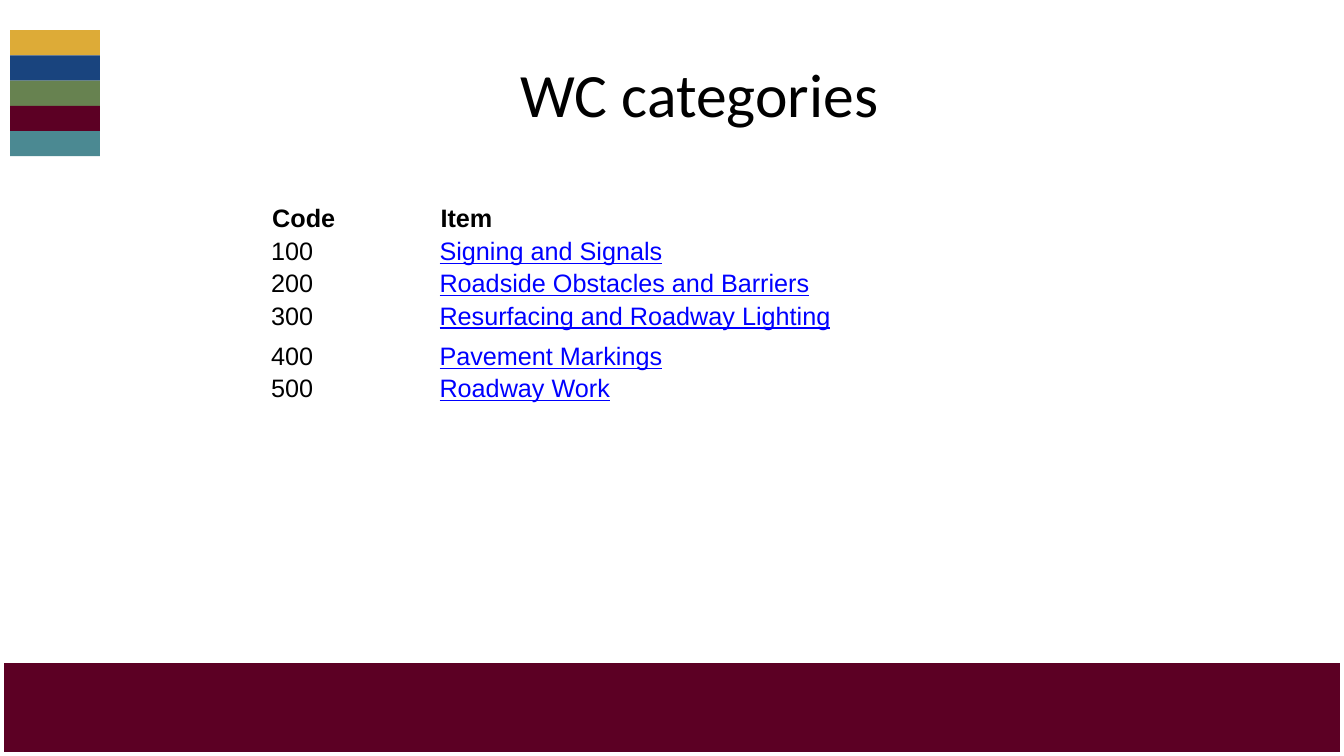
"""Build the WC categories slide with its colour stripes and code table."""
from dataclasses import dataclass

import pptx
import pptx.dml.color
import pptx.enum.shapes
import pptx.enum.text
import pptx.util

Inches = pptx.util.Inches
Pt = pptx.util.Pt


@dataclass
class Bar:
    left: float
    top: float
    width: float
    height: float
    fill: str | None = None
    line: str | None = None


@dataclass
class Category:
    code: str
    item: str
    height: float = 0.32
    header: bool = False


STRIPE_COLORS = ["DDAB37", "19447E", "678250", "5C0024", "4B8992"]
BARS = [
    Bar(0, 6.58, 13.33, 0.9, "5C0024"),
    *(Bar(0.1, 0.3 + 0.25 * i, 0.89, 0.25, c) for i, c in enumerate(STRIPE_COLORS)),
    Bar(0, 0, 13.33, 7.5, line="FFFFFF"),
]
CATEGORIES = [
    Category("Code", "Item", 0.34, header=True),
    Category("100", "Signing and Signals"),
    Category("200", "Roadside Obstacles and Barriers"),
    Category("300", "Resurfacing and Roadway Lighting", 0.4),
    Category("400", "Pavement Markings"),
    Category("500", "Roadway Work"),
]


def rgb(value: str) -> pptx.dml.color.RGBColor:
    return pptx.dml.color.RGBColor.from_string(value)


def add_bar(slide, bar: Bar) -> None:
    sp = slide.shapes.add_shape(
        pptx.enum.shapes.MSO_SHAPE.RECTANGLE,
        Inches(bar.left), Inches(bar.top), Inches(bar.width), Inches(bar.height))
    sp.shadow.inherit = False
    if bar.fill:
        sp.fill.solid()
        sp.fill.fore_color.rgb = rgb(bar.fill)
    else:
        sp.fill.background()
    if bar.line:
        sp.line.color.rgb = rgb(bar.line)
        sp.line.width = Pt(6)
    else:
        sp.line.fill.background()


def add_title(slide, text: str) -> None:
    sp = slide.shapes.title
    sp.left, sp.top = Inches(1.22), Inches(0.3)
    sp.width, sp.height = Inches(11.44), Inches(1.25)
    tf = sp.text_frame
    tf.text = text
    tf.vertical_anchor = pptx.enum.text.MSO_ANCHOR.MIDDLE
    p = tf.paragraphs[0]
    p.alignment = pptx.enum.text.PP_ALIGN.CENTER
    p.font.size = Pt(44)
    p.font.name = "Calibri"
    p.font.color.rgb = rgb("000000")


def fill_cell(cell, text: str, header: bool, link: bool) -> None:
    cell.fill.solid()
    cell.fill.fore_color.rgb = rgb("FFFFFF")
    inset = Inches(0.03 if header else 0.02)
    cell.margin_left = cell.margin_right = inset
    cell.margin_top = cell.margin_bottom = inset
    anchor = pptx.enum.text.MSO_ANCHOR
    cell.vertical_anchor = anchor.MIDDLE if header else anchor.TOP
    cell.text = text
    p = cell.text_frame.paragraphs[0]
    p.font.size = Pt(18)
    p.font.name = "Arial"
    p.font.bold = header
    p.font.underline = link
    p.font.color.rgb = rgb("0000FF" if link else "000000")


def add_categories(slide, categories: list[Category]) -> None:
    height = sum(c.height for c in categories)
    table = slide.shapes.add_table(
        len(categories), 2, Inches(2.67), Inches(2), Inches(9), Inches(height)).table
    table.first_row = table.horz_banding = False
    for column, width in zip(table.columns, (1.67, 7.33)):
        column.width = Inches(width)
    for row, category in zip(table.rows, categories):
        row.height = Inches(category.height)
        fill_cell(row.cells[0], category.code, category.header, link=False)
        fill_cell(row.cells[1], category.item, category.header, link=not category.header)


def main() -> None:
    prs = pptx.Presentation()
    prs.slide_width, prs.slide_height = Inches(13.33), Inches(7.5)
    slide = prs.slides.add_slide(prs.slide_layouts[5])
    for bar in BARS:
        add_bar(slide, bar)
    add_title(slide, "WC categories")
    add_categories(slide, CATEGORIES)
    prs.save("out.pptx")


if __name__ == "__main__":
    main()
